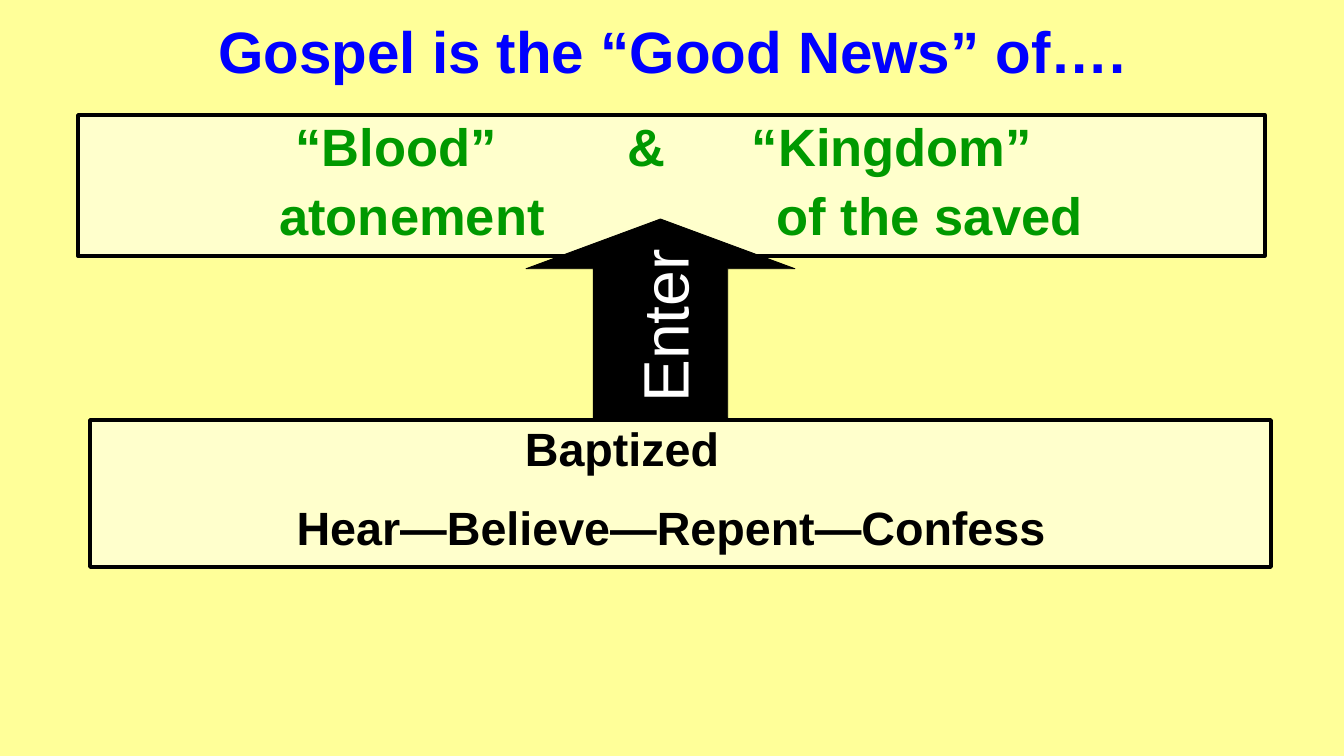
import dataclasses

import pptx
import pptx.dml.color
import pptx.enum.shapes
import pptx.enum.text
import pptx.oxml.ns
import pptx.util
from lxml import etree

EMU_PER_PX = 914400 // 84
ANCHOR = pptx.enum.text.MSO_ANCHOR
ALIGN = pptx.enum.text.PP_ALIGN
SHAPE = pptx.enum.shapes.MSO_SHAPE


def px(length):
    return pptx.util.Emu(length * EMU_PER_PX)


def color(code):
    return pptx.dml.color.RGBColor.from_string(code)


@dataclasses.dataclass(frozen=True)
class Theme:
    font: str = "Arial"
    page: str = "FFFF99"
    panel: str = "FFFFCC"
    ink: str = "000000"
    title: str = "0000FF"
    message: str = "009900"
    arrow_text: str = "FFFFFF"
    title_size: int = 50
    message_size: int = 45
    steps_size: int = 40
    arrow_size: int = 55


class GospelPage:
    def __init__(self, deck, theme):
        self.theme = theme
        self.page = deck.slides.add_slide(deck.slide_layouts[5])
        fill = self.page.background.fill
        fill.solid()
        fill.fore_color.rgb = color(theme.page)

    def frame(self, box, anchor):
        frame = box.text_frame
        frame.vertical_anchor = anchor
        frame.auto_size = pptx.enum.text.MSO_AUTO_SIZE.NONE
        frame.word_wrap = True
        frame.margin_left = frame.margin_right = px(12)
        frame.margin_top = frame.margin_bottom = px(6)
        return frame

    def style(self, para, size, ink, bold=True):
        for span in para.runs:
            span.font.name = self.theme.font
            span.font.size = pptx.util.Pt(size)
            span.font.bold = bold
            span.font.color.rgb = color(ink)

    def title(self, text):
        box = self.page.shapes.title
        box.left, box.top, box.width, box.height = map(px, (34, 17, 1277, 67))
        frame = self.frame(box, ANCHOR.MIDDLE)
        frame.text = text
        para = frame.paragraphs[0]
        para.alignment = ALIGN.CENTER
        self.style(para, self.theme.title_size, self.theme.title)

    def shape(self, kind, place, fill, line_width):
        box = self.page.shapes.add_shape(kind, *map(px, place))
        box.shadow.inherit = False
        box.fill.solid()
        box.fill.fore_color.rgb = color(fill)
        box.line.color.rgb = color(self.theme.ink)
        box.line.width = pptx.util.Pt(line_width)
        return box

    def panel(self, place, rows, size, ink, gap):
        """Draw a box whose rows map page x centres to the words set there."""
        box = self.shape(SHAPE.RECTANGLE, place, self.theme.panel, 3)
        frame = self.frame(box, ANCHOR.TOP)
        text_left = place[0] + 12
        for index, row in enumerate(rows):
            para = frame.add_paragraph() if index else frame.paragraphs[0]
            para.text = "".join("\t" + words for words in row.values())
            para.alignment = ALIGN.LEFT
            para.line_spacing = 0.9
            para.space_before = pptx.util.Pt(gap if index else 0)
            self.center_tabs(para, [center - text_left for center in row])
            self.style(para, size, ink)

    def center_tabs(self, para, stops):
        name = pptx.oxml.ns.qn
        tabs = etree.SubElement(para._p.get_or_add_pPr(), name("a:tabLst"))
        for stop in stops:
            etree.SubElement(tabs, name("a:tab"), pos=str(px(stop)), algn="ctr")

    def up_arrow(self, place):
        arrow = self.shape(SHAPE.UP_ARROW, place, self.theme.ink, 0.75)
        arrow.adjustments[0] = 0.5
        arrow.adjustments[1] = 0.25

    def upward_text(self, place, text):
        box = self.page.shapes.add_textbox(*map(px, place))
        frame = self.frame(box, ANCHOR.MIDDLE)
        frame._txBody.bodyPr.set("vert", "vert270")
        frame.text = text
        para = frame.paragraphs[0]
        para.alignment = ALIGN.CENTER
        self.style(para, self.theme.arrow_size, self.theme.arrow_text, bold=False)


def main():
    deck = pptx.Presentation()
    deck.slide_width, deck.slide_height = px(1344), px(756)
    theme = Theme()
    page = GospelPage(deck, theme)
    page.title("Gospel is the “Good News” of….")
    page.panel(
        (78, 115, 1187, 141),
        [
            {396: "“Blood”", 646: "&", 892: "“Kingdom”"},
            {412: "atonement", 930: "of the saved"},
        ],
        theme.message_size, theme.message, gap=11,
    )
    page.panel(
        (90, 420, 1181, 147),
        [{622: "Baptized"}, {671: "Hear—Believe—Repent—Confess"}],
        theme.steps_size, theme.ink, gap=25,
    )
    page.up_arrow((526, 219, 269, 199))
    page.upward_text((613, 226, 100, 200), "Enter")
    deck.save("out.pptx")


if __name__ == "__main__":
    main()
